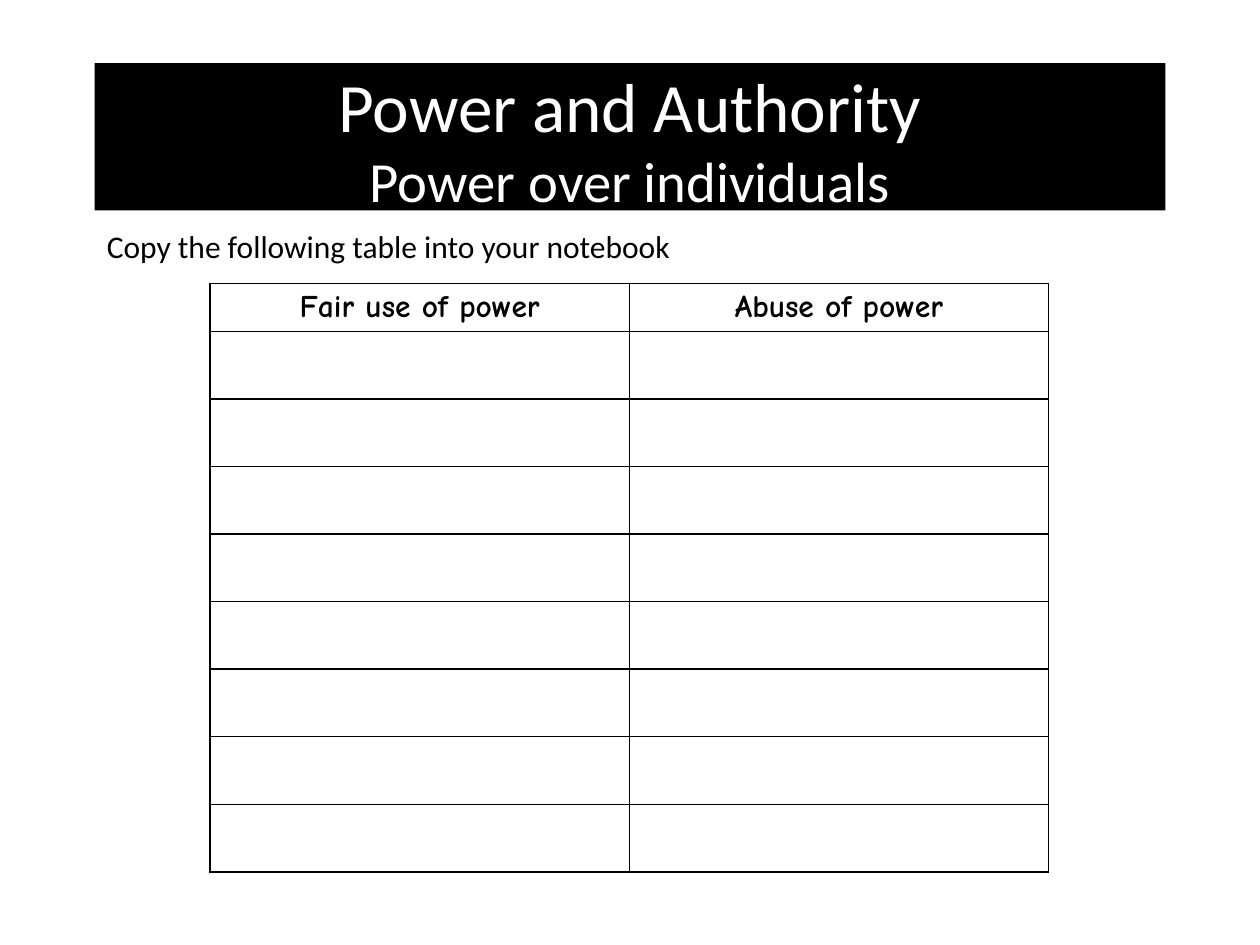
"""Build a slide with a title band and an empty two-column table to copy."""
from lxml import etree
from pptx import Presentation
from pptx.dml.color import RGBColor
from pptx.enum.text import MSO_ANCHOR, MSO_AUTO_SIZE, PP_ALIGN
from pptx.oxml.ns import qn
from pptx.util import Inches, Pt

CENTER, LEFT = PP_ALIGN.CENTER, PP_ALIGN.LEFT
TOP = MSO_ANCHOR.TOP
NO_FIT = MSO_AUTO_SIZE.NONE
TITLE_ONLY = 5
BLACK, WHITE = "000000", "FFFFFF"

TITLE_LINES = [("Power and Authority", 39.6), ("Power over individuals", 32.4)]
INSTRUCTION = "Copy the following table into your notebook"
HEADINGS = ["Fair use of power", "Abuse of power"]
EMPTY_ROWS = 8

SLIDE_WIDTH, SLIDE_HEIGHT = 10, 7.5
MARGIN = 0.75
TABLE_LEFT, TABLE_TOP = SLIDE_WIDTH / 6, 2.25
COLUMN_WIDTH = SLIDE_WIDTH / 3 - 0.005
TABLE_HEIGHT, HEADER_HEIGHT = 4.67, 0.38
ROW_HEIGHT = (TABLE_HEIGHT - HEADER_HEIGHT) / EMPTY_ROWS


def color(value):
    return RGBColor.from_string(value)


def add_text(paragraph, text, size=18, font="Calibri", fill=BLACK, bold=False,
             align=LEFT, spacing=1.0):
    paragraph.alignment = align
    paragraph.line_spacing = spacing
    run = paragraph.add_run()
    run.text = text
    run.font.size = Pt(size)
    run.font.name = font
    run.font.bold = bold
    run.font.color.rgb = color(fill)


def place(shape, left, top, width, height):
    shape.left, shape.top = Inches(left), Inches(top)
    shape.width, shape.height = Inches(width), Inches(height)


def set_borders(cell, value=BLACK, width=1):
    properties = cell._tc.get_or_add_tcPr()
    for side in ("a:lnL", "a:lnR", "a:lnT", "a:lnB"):
        line = etree.SubElement(properties, qn(side), w=str(Pt(width)))
        fill = etree.SubElement(line, qn("a:solidFill"))
        etree.SubElement(fill, qn("a:srgbClr"), val=value)


def add_title(slide):
    title = slide.shapes.title
    place(title, MARGIN, 0.5, SLIDE_WIDTH - 2 * MARGIN, 1.17)
    title.fill.solid()
    title.fill.fore_color.rgb = color(BLACK)
    frame = title.text_frame
    frame.auto_size = NO_FIT
    frame.vertical_anchor = TOP
    frame.margin_top = frame.margin_bottom = 0
    paragraph = frame.paragraphs[0]
    for index, (text, size) in enumerate(TITLE_LINES):
        if index:
            paragraph.add_line_break()
        add_text(paragraph, text, size=size, fill=WHITE, align=CENTER)
    paragraph.space_before = 0


def add_answer_table(slide):
    columns = len(HEADINGS)
    heights = [HEADER_HEIGHT] + [ROW_HEIGHT] * EMPTY_ROWS
    table = slide.shapes.add_table(
        len(heights), columns, Inches(TABLE_LEFT), Inches(TABLE_TOP),
        Inches(columns * COLUMN_WIDTH), Inches(TABLE_HEIGHT)).table
    table.first_row = table.horz_banding = False
    for row, height in zip(table.rows, heights):
        row.height = Inches(height)
    for cell in table.iter_cells():
        set_borders(cell)
        cell.fill.solid()
        cell.fill.fore_color.rgb = color(WHITE)
    for column, heading in enumerate(HEADINGS):
        cell = table.cell(0, column)
        cell.margin_left = cell.margin_right = Inches(0.07)
        cell.margin_top = cell.margin_bottom = 0
        cell.vertical_anchor = TOP
        add_text(cell.text_frame.paragraphs[0], heading, font="Comic Neue",
                 bold=True, align=CENTER, spacing=1.15)


def add_instruction(slide):
    box = slide.shapes.add_textbox(0, 0, 0, 0)
    place(box, MARGIN, 1.75, 5.33, 0.4)
    box.text_frame.word_wrap = True
    add_text(box.text_frame.paragraphs[0], INSTRUCTION)


def main():
    presentation = Presentation()
    presentation.slide_width = Inches(SLIDE_WIDTH)
    presentation.slide_height = Inches(SLIDE_HEIGHT)
    slide = presentation.slides.add_slide(presentation.slide_layouts[TITLE_ONLY])
    add_title(slide)
    add_answer_table(slide)
    add_instruction(slide)
    presentation.save("out.pptx")


if __name__ == "__main__":
    main()
